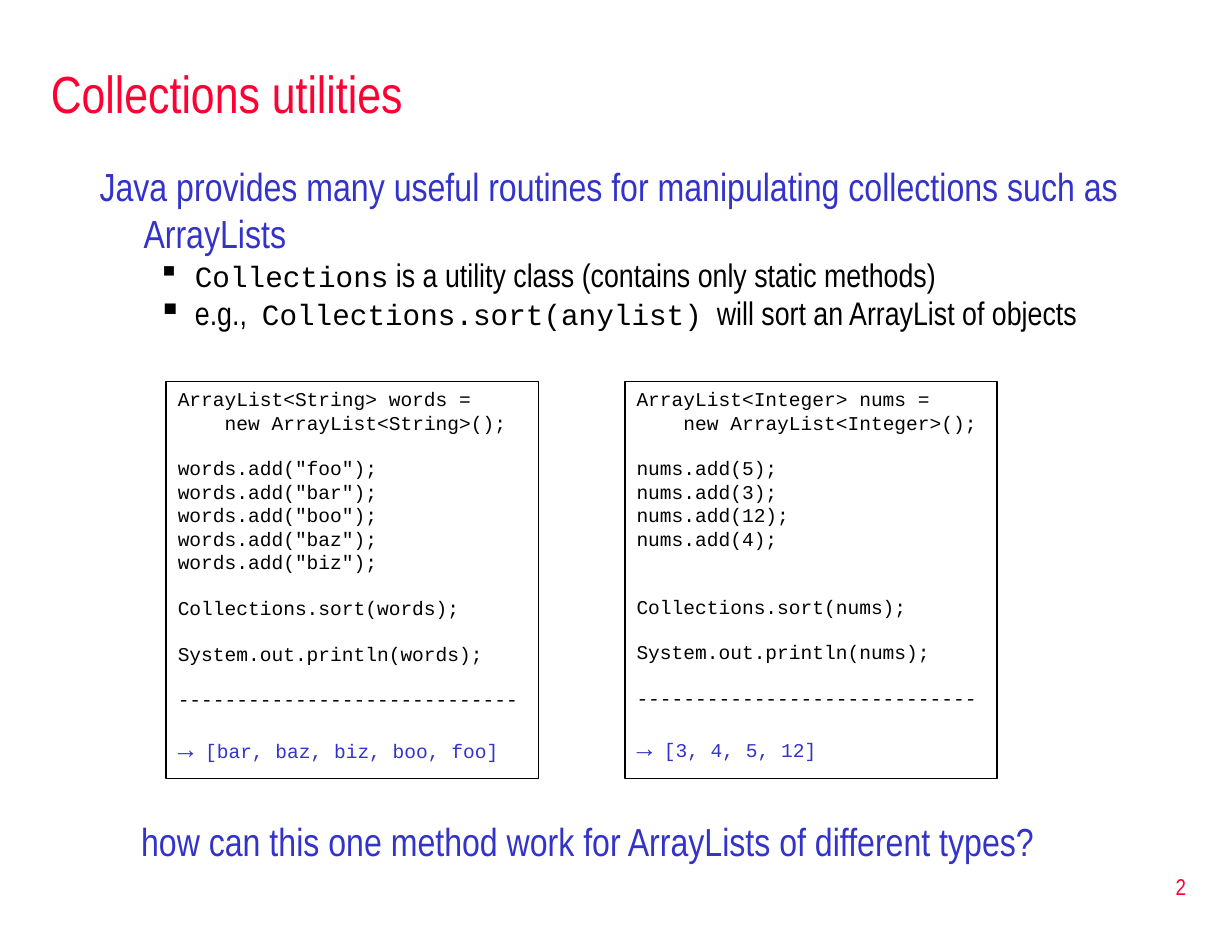
"""Build the slide on sorting lists with the Collections utility class."""
import pptx
import pptx.dml.color
import pptx.enum.shapes
import pptx.enum.text
import pptx.oxml.ns
import pptx.util
from lxml import etree

Pt = pptx.util.Pt
ALIGN = pptx.enum.text.PP_ALIGN
ANCHOR = pptx.enum.text.MSO_ANCHOR
RED = pptx.dml.color.RGBColor(0xFF, 0x00, 0x33)
BLUE = pptx.dml.color.RGBColor(0x33, 0x33, 0xCC)
BLACK = pptx.dml.color.RGBColor(0, 0, 0)
SANS, MONO = "Arial Narrow", "Courier New"

TITLE = "Collections utilities"
INTRO = "Java provides many useful routines for manipulating collections such as ArrayLists"
POINTS = [
    [("Collections", MONO, 18), (" is a utility class (contains only static methods)", SANS, 20)],
    [("e.g.,  ", SANS, 20), ("Collections.sort(anylist)", MONO, 18),
     ("  will sort an ArrayList of objects", SANS, 20)],
]
QUESTION = "how can this one method work for ArrayLists of different types?"
PAGE = "2"
EXAMPLES = [
    {"type": "String", "list": "words", "items": ['"foo"', '"bar"', '"boo"', '"baz"', '"biz"'],
     "result": "[bar, baz, biz, boo, foo]"},
    {"type": "Integer", "list": "nums", "items": ["5", "3", "12", "4"],
     "result": "[3, 4, 5, 12]"},
]

CODE_LINE = 13.6
CODE_INDENT = 28.8
CODE_LEFT, CODE_TOP, CODE_WIDTH, CODE_HEIGHT, CODE_STEP = 102, 234, 228.5, 243.5, 281.5
MOST_ITEMS = max(len(example["items"]) for example in EXAMPLES)


def write(frame, text, font=SANS, size=24, color=BLACK, align=ALIGN.LEFT, before=0,
          spacing=None, margin=0, hanging=0, bullet=None):
    """Add one paragraph; text is a string or a list of (text, font, size) runs."""
    paragraph = frame.paragraphs[0]
    if paragraph.runs:
        paragraph = frame.add_paragraph()
    paragraph.alignment = align
    paragraph.space_before = Pt(before)
    if spacing:
        paragraph.line_spacing = spacing
    properties = paragraph._p.get_or_add_pPr()
    properties.set("marL", str(Pt(margin)))
    properties.set("indent", str(Pt(-hanging)))
    if bullet:
        mark = etree.SubElement(properties, pptx.oxml.ns.qn("a:buChar"))
        mark.set("char", bullet)
    for words, face, points in [(text, font, size)] if isinstance(text, str) else text:
        run = paragraph.add_run()
        run.text = words
        run.font.name = face
        run.font.size = Pt(points)
        run.font.color.rgb = color


def prepare(shape, anchor=ANCHOR.TOP):
    frame = shape.text_frame
    frame.auto_size = pptx.enum.text.MSO_AUTO_SIZE.NONE
    frame.word_wrap = True
    frame.vertical_anchor = anchor
    return frame


def code_lines(example):
    """List each code line with the empty lines above it and its indent."""
    name, kind, items = example["list"], example["type"], example["items"]
    lines = [(f"ArrayList<{kind}> {name} =", 0, 0),
             (f"new ArrayList<{kind}>();", 0, CODE_INDENT)]
    lines += [(f"{name}.add({item});", int(i == 0), 0) for i, item in enumerate(items)]
    lines += [(f"Collections.sort({name});", 1 + MOST_ITEMS - len(items), 0),
              (f"System.out.println({name});", 1, 0),
              ("-" * 29, 1, 0)]
    return lines


def add_example(slide, left, example):
    box = slide.shapes.add_shape(pptx.enum.shapes.MSO_SHAPE.RECTANGLE, Pt(left), Pt(CODE_TOP),
                                 Pt(CODE_WIDTH), Pt(CODE_HEIGHT))
    box.shadow.inherit = False
    box.fill.background()
    box.line.color.rgb = BLACK
    box.line.width = Pt(1)
    frame = prepare(box)
    for line, gaps, margin in code_lines(example):
        write(frame, line, font=MONO, size=12, before=gaps * CODE_LINE, margin=margin)
    write(frame, [("→", MONO, 16), (" " + example["result"], MONO, 12)],
          color=BLUE, before=CODE_LINE)


def main():
    deck = pptx.Presentation()
    deck.slide_width, deck.slide_height = Pt(756), Pt(576)
    slide = deck.slides.add_slide(deck.slide_layouts[5])

    title = slide.shapes.title
    title.left, title.top, title.width, title.height = Pt(24), Pt(30), Pt(714), Pt(54)
    write(prepare(title, ANCHOR.MIDDLE), TITLE, size=32, color=RED)

    body = prepare(slide.shapes.add_textbox(Pt(54), Pt(96), Pt(685.5), Pt(144)))
    write(body, INTRO, color=BLUE, before=1.2, margin=27, hanging=27)
    for point in POINTS:
        write(body, point, before=4, spacing=0.8, margin=58.5, hanging=22.5, bullet="▪")

    for column, example in enumerate(EXAMPLES):
        add_example(slide, CODE_LEFT + column * CODE_STEP, example)

    question = prepare(slide.shapes.add_textbox(Pt(52.5), Pt(498), Pt(685.5), Pt(36)))
    write(question, QUESTION, color=BLUE, before=1.2, margin=45, hanging=18)

    page = prepare(slide.shapes.add_textbox(Pt(577.5), Pt(525), Pt(157.5), Pt(38)), ANCHOR.MIDDLE)
    write(page, PAGE, size=14, color=RED, align=ALIGN.RIGHT)

    deck.save("out.pptx")


if __name__ == "__main__":
    main()
